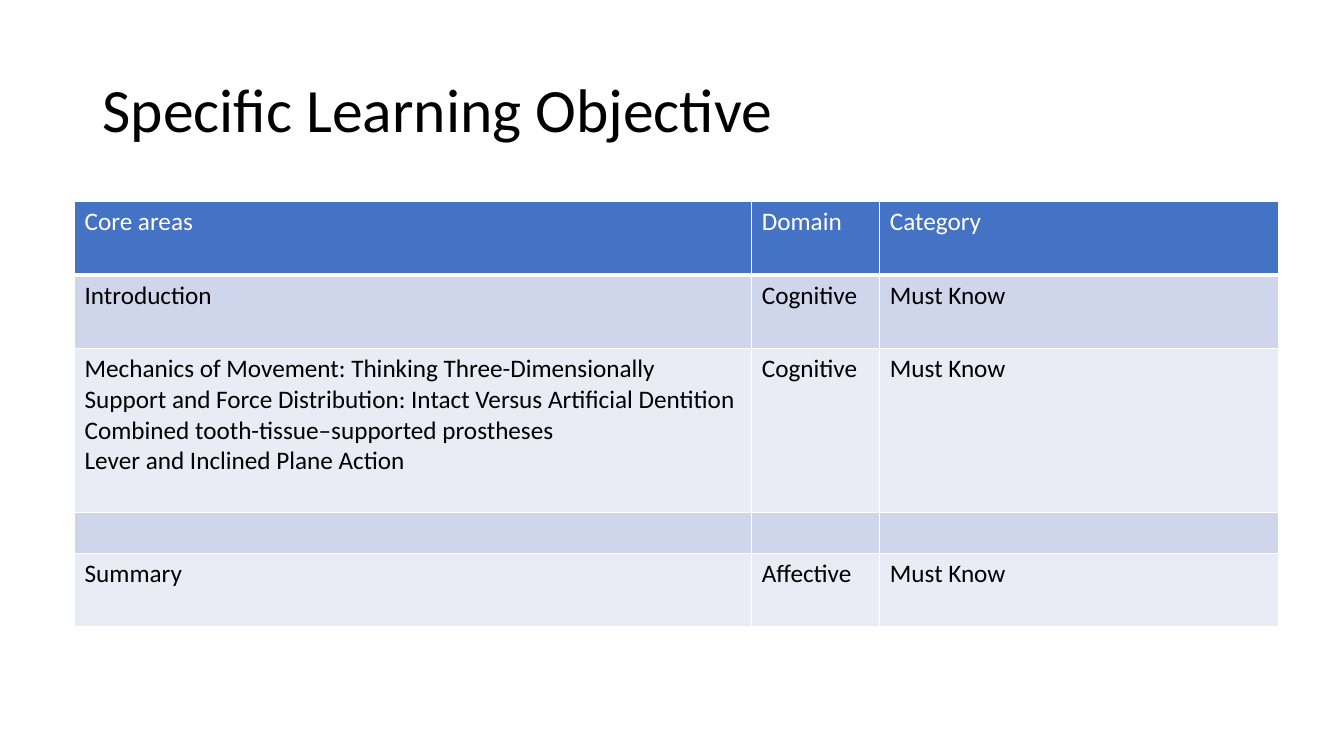
from lxml.etree import SubElement
from pptx import Presentation
from pptx.dml.color import RGBColor
from pptx.enum.text import MSO_ANCHOR, MSO_AUTO_SIZE, PP_ALIGN
from pptx.oxml.ns import qn
from pptx.util import Pt

PX = 9525  # EMU per px, 96 px to the inch
BLACK = RGBColor(0x00, 0x00, 0x00)
WHITE = RGBColor(0xFF, 0xFF, 0xFF)
HEADER_BLUE = RGBColor(0x44, 0x72, 0xC4)
BAND_DARK = RGBColor(0xCF, 0xD5, 0xEA)
BAND_LIGHT = RGBColor(0xE9, 0xEB, 0xF5)

COLUMN_WIDTHS = [645, 122, 380]
ROW_HEIGHTS = [70, 70, 156, 39, 70]
OBJECTIVES = [
    ("Core areas", "Domain", "Category"),
    ("Introduction", "Cognitive", "Must Know"),
    (
        "Mechanics of Movement: Thinking Three-Dimensionally\n"
        "Support and Force Distribution: Intact Versus Artificial Dentition\n"
        "Combined tooth-tissue–supported prostheses\n"
        "Lever and Inclined Plane Action",
        "Cognitive",
        "Must Know",
    ),
    ("", "", ""),
    ("Summary", "Affective", "Must Know"),
]


def write_text(frame, text, font="Calibri", size=18, color=BLACK, line_spacing=None):
    """Fill a text frame, one paragraph for each line of text."""
    frame.text = text
    for paragraph in frame.paragraphs:
        paragraph.alignment = PP_ALIGN.LEFT
        paragraph.line_spacing = line_spacing
        for run in paragraph.runs:
            run.font.name = font
            run.font.size = Pt(size)
            run.font.color.rgb = color


def set_borders(cell, color, **widths):
    """Draw cell borders; widths in points are keyed L, R, T and B."""
    properties = cell._tc.get_or_add_tcPr()
    for position, side in enumerate("LRTB"):
        line = SubElement(properties, qn(f"a:ln{side}"), w=str(Pt(widths[side])))
        fill = SubElement(line, qn("a:solidFill"))
        SubElement(fill, qn("a:srgbClr"), val=str(color))
        properties.insert(position, line)


class SlideBuilder:
    def __init__(self, slide):
        self.slide = slide

    def title(self, text, left, top, width, height):
        shape = self.slide.shapes.title
        shape.left, shape.top = left * PX, top * PX
        shape.width, shape.height = width * PX, height * PX
        frame = shape.text_frame
        frame.word_wrap = True
        frame.auto_size = MSO_AUTO_SIZE.NONE
        frame.vertical_anchor = MSO_ANCHOR.MIDDLE
        write_text(frame, text, size=44, line_spacing=0.9)

    def table(self, rows, left, top, column_widths, row_heights):
        table = self.slide.shapes.add_table(
            len(rows), len(column_widths), left * PX, top * PX,
            sum(column_widths) * PX, sum(row_heights) * PX,
        ).table
        for column, width in zip(table.columns, column_widths):
            column.width = width * PX
        for row, height in zip(table.rows, row_heights):
            row.height = height * PX
        for index, texts in enumerate(rows):
            header = index == 0
            band = BAND_DARK if index % 2 else BAND_LIGHT
            for cell, text in zip(table.rows[index].cells, texts):
                cell.fill.solid()
                cell.fill.fore_color.rgb = HEADER_BLUE if header else band
                set_borders(cell, WHITE, L=1, R=1, T=1, B=3 if header else 1)
                write_text(cell.text_frame, text, color=WHITE if header else BLACK)
                for run in (r for p in cell.text_frame.paragraphs for r in p.runs):
                    run.font.bold = False


def main():
    presentation = Presentation()
    presentation.slide_width = 1280 * PX
    presentation.slide_height = 720 * PX
    title_only = presentation.slide_layouts[5]
    builder = SlideBuilder(presentation.slides.add_slide(title_only))
    builder.title("Specific Learning Objective", 88, 38, 1104, 139)
    builder.table(OBJECTIVES, 71, 192, COLUMN_WIDTHS, ROW_HEIGHTS)
    presentation.save("out.pptx")


if __name__ == "__main__":
    main()
